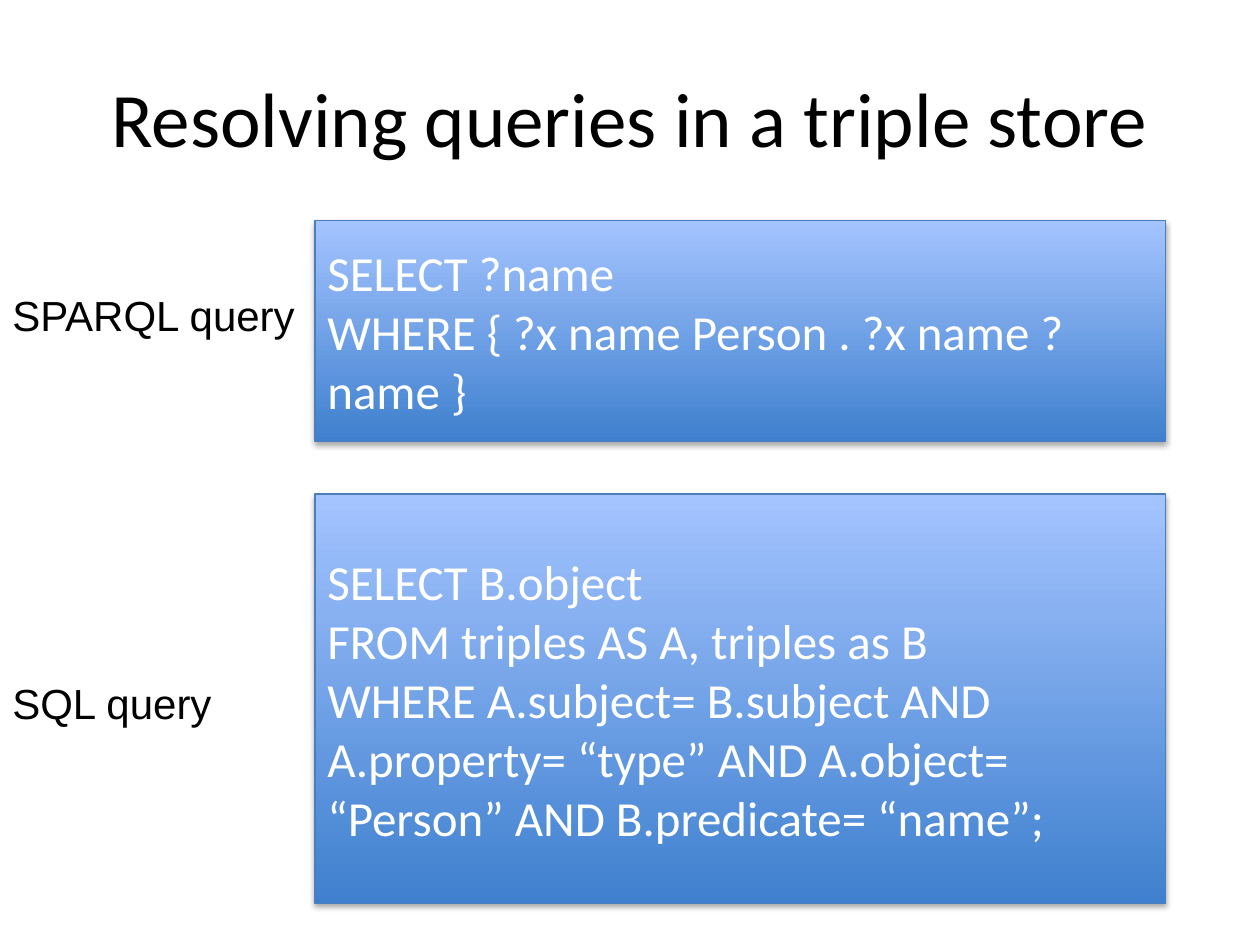
from dataclasses import dataclass

from lxml.etree import SubElement
from pptx import Presentation
from pptx.dml.color import RGBColor
from pptx.enum.shapes import MSO_SHAPE
from pptx.enum.text import MSO_ANCHOR, MSO_AUTO_SIZE, PP_ALIGN
from pptx.oxml.ns import qn
from pptx.util import Cm, Pt


@dataclass(frozen=True)
class Theme:
    text: str = "000000"
    code_text: str = "FFFFFF"
    box_bottom: str = "3F80CE"
    box_top: str = "A4C4FF"
    box_line: str = "4B7EBC"
    shadow: str = "000000"
    heading_font: str = "Calibri"
    label_font: str = "Arial"
    title_size: int = 44
    code_size: int = 28
    label_size: int = 24


THEME = Theme()


def write(tf, lines, font, size, color, align=PP_ALIGN.LEFT):
    for i, line in enumerate(lines):
        p = tf.add_paragraph() if i else tf.paragraphs[0]
        p.text = line
        p.alignment = align
        p.font.name = font
        p.font.size = Pt(size)
        p.font.color.rgb = RGBColor.from_string(color)


def add_soft_shadow(sp):
    """Replace the inherited shadow with a faint one straight below."""
    sp.shadow.inherit = False
    effects = sp._element.spPr.find(qn("a:effectLst"))
    shadow = SubElement(effects, qn("a:outerShdw"), blurRad=str(Pt(3.1)),
                        dist=str(Pt(1.8)), dir="5400000", rotWithShape="0")
    color = SubElement(shadow, qn("a:srgbClr"), val=THEME.shadow)
    SubElement(color, qn("a:alpha"), val="35000")


def add_title(s, text, left, top, width, height):
    tf = s.shapes.add_textbox(left, top, width, height).text_frame
    tf.word_wrap = True
    tf.vertical_anchor = MSO_ANCHOR.MIDDLE
    write(tf, [text], THEME.heading_font, THEME.title_size, THEME.text, PP_ALIGN.CENTER)


def add_label(s, text, left, top, width, height):
    tf = s.shapes.add_textbox(left, top, width, height).text_frame
    tf.word_wrap = False
    tf.auto_size = MSO_AUTO_SIZE.SHAPE_TO_FIT_TEXT
    write(tf, [text], THEME.label_font, THEME.label_size, THEME.text)


def add_code_box(s, lines, left, top, width, height):
    sp = s.shapes.add_shape(MSO_SHAPE.RECTANGLE, left, top, width, height)
    sp.fill.gradient()
    sp.fill.gradient_angle = 90
    for stop, color in zip(sp.fill.gradient_stops, (THEME.box_bottom, THEME.box_top)):
        stop.color.rgb = RGBColor.from_string(color)
    sp.line.color.rgb = RGBColor.from_string(THEME.box_line)
    sp.line.width = Pt(0.75)
    add_soft_shadow(sp)
    tf = sp.text_frame
    tf.word_wrap = True
    tf.vertical_anchor = MSO_ANCHOR.MIDDLE
    write(tf, lines, THEME.heading_font, THEME.code_size, THEME.code_text)


def add_query(s, label, label_width, label_offset, lines, top, height):
    """Place a label at the slide edge and its query box to the right."""
    add_code_box(s, lines, Cm(6.35), top, Cm(17.15), height)
    add_label(s, label, 0, top + label_offset, label_width, Cm(1.27))


def main():
    prs = Presentation()
    prs.slide_width, prs.slide_height = Cm(25.4), Cm(19.05)
    s = prs.slides.add_slide(prs.slide_layouts[6])
    add_title(s, "Resolving queries in a triple store",
              Cm(1.27), Cm(0.76), Cm(22.86), Cm(3.18))
    add_query(s, "SPARQL query", Cm(6.27), Cm(1.27), [
        "SELECT ?name",
        "WHERE { ?x name Person . ?x name ?name }",
    ], Cm(4.45), Cm(4.45))
    add_query(s, "SQL query", Cm(4.57), Cm(3.58), [
        "SELECT B.object",
        "FROM triples AS A, triples as B",
        "WHERE A.subject= B.subject AND A.property= “type” AND A.object= "
        "“Person” AND B.predicate= “name”;",
    ], Cm(9.96), Cm(8.26))
    prs.save("out.pptx")


if __name__ == "__main__":
    main()
